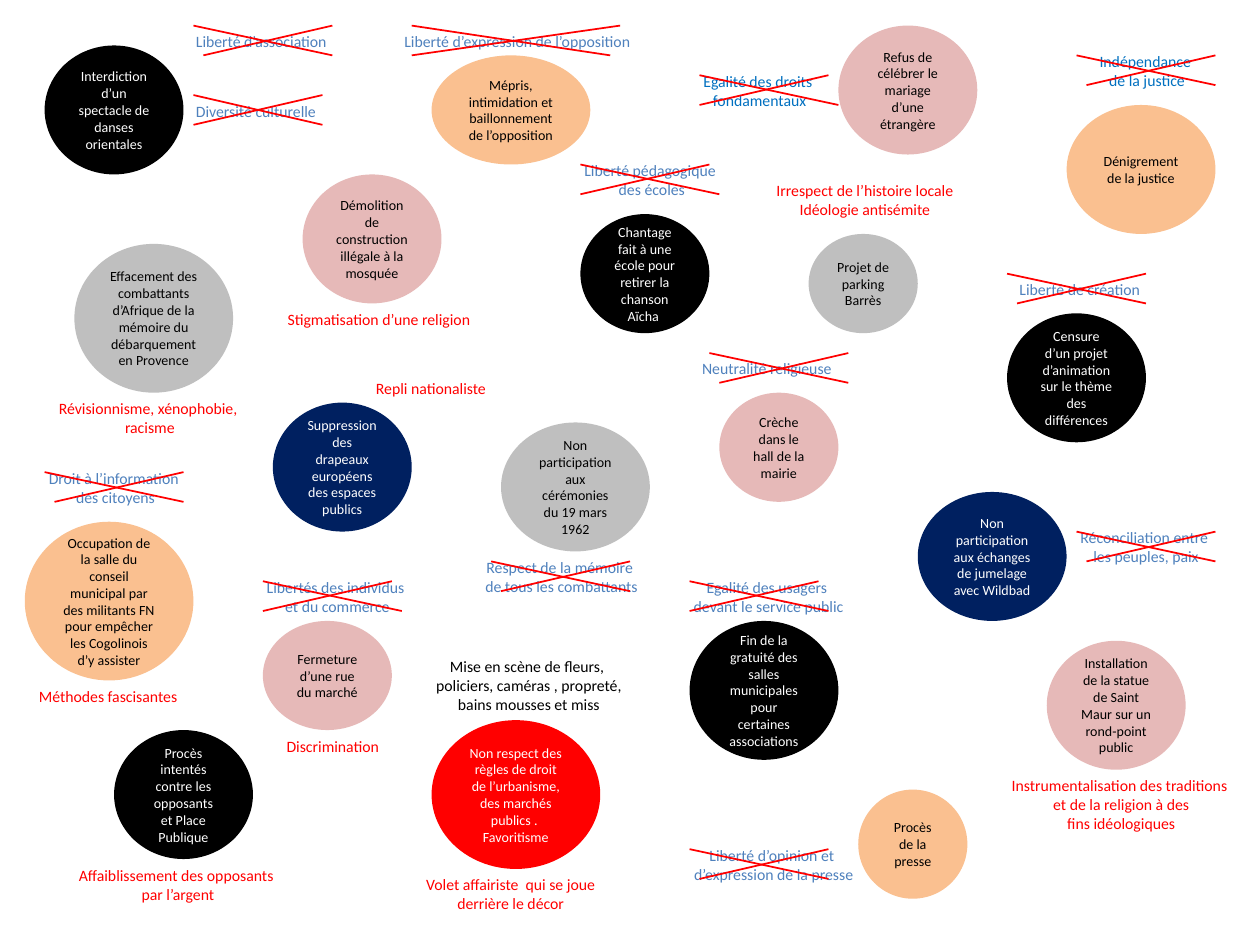
from lxml.etree import SubElement
from pptx import Presentation
from pptx.dml.color import RGBColor
from pptx.enum.shapes import MSO_CONNECTOR, MSO_SHAPE
from pptx.enum.text import MSO_ANCHOR, MSO_AUTO_SIZE as AutoSize, PP_ALIGN as Align
from pptx.oxml.ns import qn
from pptx.util import Pt

COLORS = {
    "black": "000000", "white": "FFFFFF", "pink": "E6B9B8", "grey": "BFBFBF",
    "orange": "FAC090", "navy": "002060", "red": "FF0000",
    "blue": "4F81BD", "bright": "0070C0",
}
# Everything sits on a 2 mm grid: column and row numbers give the positions
STEP, LEFT, TOP = 5.67, 2.83, 3.3
CROSS_ROWS = 3


def grid(col, row):
    return Pt(LEFT + col * STEP), Pt(TOP + row * STEP)


def write_lines(frame, lines, size, color, align):
    for index, line in enumerate(lines):
        paragraph = frame.paragraphs[0] if index == 0 else frame.add_paragraph()
        paragraph.alignment = align
        run = paragraph.add_run()
        run.text = line
        run.font.size = Pt(size)
        run.font.name = "Calibri"
        run.font.color.rgb = RGBColor.from_string(COLORS[color])


prs = Presentation()
prs.slide_width, prs.slide_height = Pt(720), Pt(540)
slide = prs.slides.add_slide(prs.slide_layouts[6])

# Events: column, row, columns wide, rows high, fill, lines
events = [
    (4, 4, 14, 13, "black", ["Interdiction d’un spectacle de danses orientales"]),
    (58, 21, 13, 12, "black", ["Chantage fait à une école pour retirer la chanson Aïcha "]),
    (26, 62, 13, 11, "pink", ["Fermeture d’une rue du marché"]),
    (101, 31, 14, 13, "black", ["Censure d’un projet d’animation sur le thème des différences"]),
    (84, 2, 14, 13, "pink", ["Refus de célébrer le mariage d’une étrangère"]),
    (81, 23, 11, 10, "grey", ["Projet de parking Barrès"]),
    (69, 62, 15, 14, "black",
     ["Fin de la gratuité des salles municipales pour certaines associations"]),
    (30, 17, 14, 13, "pink", ["Démolition de construction illégale à la mosquée"]),
    (11, 73, 14, 13, "black", ["Procès intentés contre les opposants et Place Publique"]),
    (86, 79, 11, 11, "orange", ["Procès de la presse"]),
    (107, 10, 15, 13, "orange", ["Dénigrement de la justice"]),
    (7, 24, 16, 15, "grey",
     ["Effacement des combattants d’Afrique de la mémoire du débarquement en Provence"]),
    (72, 39, 12, 11, "pink", ["Crèche dans le hall de la mairie"]),
    (27, 40, 14, 13, "navy", ["Suppression des drapeaux européens des espaces publics"]),
    (105, 64, 14, 13, "pink",
     ["Installation de la statue de Saint Maur sur un rond-point public"]),
    (92, 49, 15, 13, "navy", ["Non participation aux échanges de jumelage avec Wildbad"]),
    (50, 42, 15, 13, "grey", ["Non participation aux cérémonies du 19 mars 1962"]),
    (43, 5, 16, 11, "orange", ["Mépris, intimidation et baillonnement de l’opposition"]),
    (2, 52, 17, 16, "orange",
     ["Occupation de la salle du conseil municipal par des militants FN "
      "pour empêcher les Cogolinois d’y assister"]),
    (43, 72, 17, 15, "red",
     ["Non respect des règles de droit de l’urbanisme, des marchés publics . ",
      "Favoritisme"]),
]
for col, row, cols, rows, fill, lines in events:
    bubble = slide.shapes.add_shape(
        MSO_SHAPE.OVAL, *grid(col, row), Pt(cols * STEP), Pt(rows * STEP))
    bubble.shadow.inherit = False
    bubble.fill.solid()
    bubble.fill.fore_color.rgb = RGBColor.from_string(COLORS[fill])
    bubble.line.fill.background()
    bubble.text_frame.word_wrap = True
    bubble.text_frame.vertical_anchor = MSO_ANCHOR.MIDDLE
    ink = "white" if fill in ("black", "navy", "red") else "black"
    write_lines(bubble.text_frame, lines, 8, ink, Align.CENTER)

# Values and abuses: column, row, width in points, colour, lines
labels = [
    (18, 2, 90.7, "blue", ["Liberté d’association"]),
    (18, 9, 84.2, "blue", ["Diversité culturelle"]),
    (57, 15, 92.9, "blue", ["Liberté pédagogique ", "des écoles"]),
    (101, 27, 84.2, "blue", ["Liberté de création"]),
    (68, 57, 101.5, "blue", ["Egalité des usagers ", "devant le service public"]),
    (6, 86, 129.6, "red", ["Affaiblissement des opposants ", "par l’argent"]),
    (4, 39, 120.2, "red", ["Révisionnisme, xénophobie, ", "racisme"]),
    (69, 6, 79.9, "bright", ["Egalité des droits ", "fondamentaux"]),
    (27, 30, 121, "red", ["Stigmatisation d’une religion"]),
    (25, 57, 94.3, "blue", ["Libertés des individus", " et du commerce"]),
    (69, 35, 90, "blue", ["Neutralité religieuse"]),
    (100, 77, 139.7, "red",
     ["Instrumentalisation des traditions", " et de la religion à des", " fins idéologiques"]),
    (36, 37, 78.5, "red", ["Repli nationaliste"]),
    (107, 52, 88.6, "blue", ["Réconciliation entre", " les peuples, paix"]),
    (39, 2, 146.9, "blue", ["Liberté d’expression de l’opposition"]),
    (3, 46, 92.2, "blue", ["Droit à l’information ", "des citoyens"]),
    (2, 68, 95, "red", ["Méthodes fascisantes"]),
    (76.3, 17, 117.4, "red", ["Irrespect de l’histoire locale", "Idéologie antisémite"]),
    (47, 55, 103, "blue", ["Respect de la mémoire ", "de tous les combattants"]),
    (109, 4, 69.1, "bright", ["Indépendance ", "de la justice"]),
    (68, 84, 107.3, "blue", ["Liberté d’opinion et ", "d’expression de la presse"]),
    (41, 87, 113, "red", ["Volet affairiste  qui se joue", "derrière le décor"]),
    (27, 73, 68.4, "red", ["Discrimination"]),
    (42, 65, 122.4, "black",
     ["Mise en scène de fleurs, ", "policiers, caméras , propreté,", "bains mousses et miss"]),
]
for col, row, width, color, lines in labels:
    label = slide.shapes.add_textbox(
        *grid(col, row), Pt(width), Pt(7.2 + 11 * len(lines)))
    label.text_frame.word_wrap = False
    label.text_frame.auto_size = AutoSize.SHAPE_TO_FIT_TEXT
    single_value = color == "blue" and len(lines) == 1
    align = Align.LEFT if single_value else Align.CENTER
    write_lines(label.text_frame, lines, 9, color, align)

# Crossed-out values: row, columns of the falling line, columns of the rising line
crosses = [
    (2, (19, 33), (20, 33)), (9, (19, 32), (19, 32)), (16, (58, 72), (58, 71)),
    (27, (101, 115), (102, 115)), (58, (69, 83), (69, 82)), (7, (70, 84), (70, 83)),
    (58, (26, 40), (26, 39)), (35, (71, 85), (72, 85)), (53, (108, 122), (109, 122)),
    (2, (41, 61), (41, 62)), (47, (4, 18), (5, 18)), (5, (108, 122), (109, 122)),
    (56, (49, 63), (50, 63)), (85, (69, 83), (70, 83)),
]
for row, falling, rising in crosses:
    bottom = row + CROSS_ROWS
    for (start, end), first, last in ((falling, row, bottom), (rising, bottom, row)):
        stroke = slide.shapes.add_connector(
            MSO_CONNECTOR.STRAIGHT, *grid(start, first), *grid(end, last))
        stroke.line.color.rgb = RGBColor.from_string(COLORS["red"])
        stroke.line.width = Pt(1)
        SubElement(stroke._element.spPr, qn("a:effectLst"))

prs.save("out.pptx")
